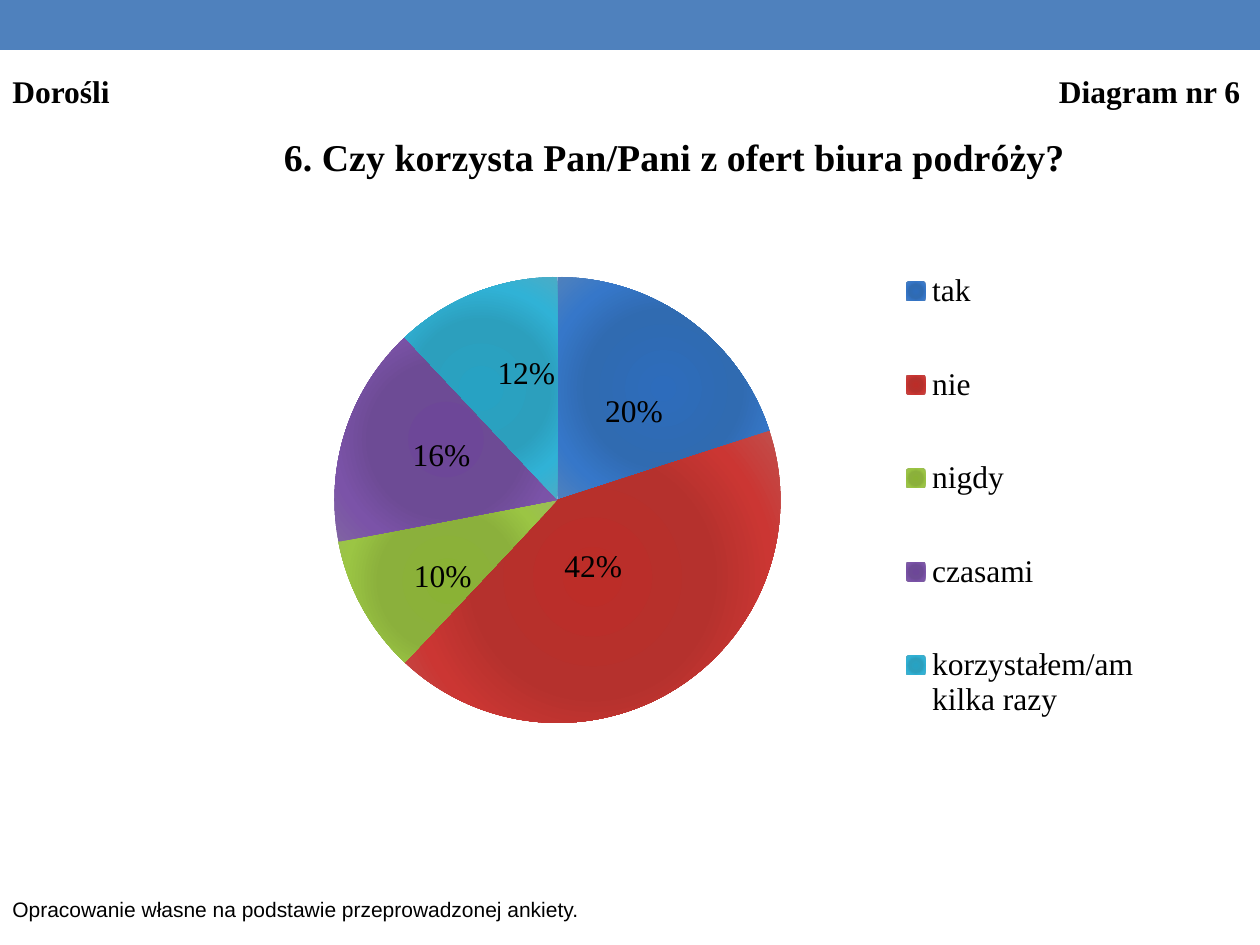
from dataclasses import dataclass

from pptx import Presentation
from pptx import util as u
from pptx.chart.data import CategoryChartData
from pptx.dml.color import RGBColor
from pptx.enum import chart as charts, shapes, text
from pptx.oxml import parse_xml
from pptx.oxml.ns import nsdecls

PX_PER_INCH = 126


@dataclass(frozen=True)
class Theme:
    bar: str = "4F81BD"
    ink: str = "000000"
    serif: str = "Times New Roman"
    sans: str = "Arial"
    title_size: float = 21.6
    body_size: float = 18
    source_size: float = 12


THEME = Theme()

ANSWERS = [
    ("tak", 20, ("2D6CBC", "306BB1", "3677C9", "4F81BD"), (11, 2)),
    ("nie", 42, ("BC2D28", "B5312D", "CB3633", "C0504D"), (-24, -27)),
    ("nigdy", 10, ("8AB235", "8BB03C", "9BC544", "9BBB59"), (-17, 23)),
    ("czasami", 16, ("6D4798", "6D4B95", "7B53A8", "8064A2"), (-10, -9)),
    ("korzystałem/am kilka razy", 12, ("27A2C3", "2C9FBD", "30B2D6", "4BACC6"), (10, -22)),
]
STOPS = (0, 50, 75, 100)
LABEL_FORMAT = '0"%"'


def px(length):
    return u.Emu(round(length * u.Inches(1) / PX_PER_INCH))


def emu_box(box):
    return [px(length) for length in box]


def style_font(font, size, name, bold=False):
    font.size = u.Pt(size)
    font.name = name
    font.bold = bold
    font.color.rgb = RGBColor.from_string(THEME.ink)


def add_bar(slide, box):
    bar = slide.shapes.add_shape(shapes.MSO_SHAPE.RECTANGLE, *emu_box(box))
    bar.shadow.inherit = False
    bar.fill.solid()
    bar.fill.fore_color.rgb = RGBColor.from_string(THEME.bar)
    bar.line.fill.background()


def add_text(slide, box, content, size, name, bold=False, right_tab=None):
    frame = slide.shapes.add_textbox(*emu_box(box)).text_frame
    frame.word_wrap = True
    frame.auto_size = text.MSO_AUTO_SIZE.SHAPE_TO_FIT_TEXT
    paragraph = frame.paragraphs[0]
    paragraph.text = content
    if right_tab:
        paragraph._p.get_or_add_pPr().append(parse_xml(
            f'<a:tabLst {nsdecls("a")}><a:tab pos="{px(right_tab)}" algn="r"/></a:tabLst>'))
    style_font(paragraph.font, size, name, bold)


def manual_layout(chart_box, x, y, width=None, height=None, mode="edge", target=None):
    chart_width, chart_height = chart_box[2:]
    parts = [("layoutTarget", target), ("xMode", mode), ("yMode", mode),
             ("x", x / chart_width), ("y", y / chart_height)]
    if width:
        parts += [("w", width / chart_width), ("h", height / chart_height)]
    body = "".join(f'<c:{tag} val="{value}"/>' for tag, value in parts if value is not None)
    return parse_xml(
        f'<c:layout {nsdecls("c")}><c:manualLayout>{body}</c:manualLayout></c:layout>')


def set_layout(element, layout, before):
    for old in element.xpath("c:layout"):
        element.remove(old)
    following = element.xpath(before)
    if following:
        following[0].addprevious(layout)
    else:
        element.append(layout)


def radial_fill(colours):
    stops = "".join(
        f'<a:gs pos="{stop * 1000}"><a:srgbClr val="{colour}"/></a:gs>'
        for stop, colour in zip(STOPS, colours))
    return parse_xml(
        f'<a:gradFill {nsdecls("a")}><a:gsLst>{stops}</a:gsLst><a:path path="circle">'
        '<a:fillToRect l="50000" t="50000" r="50000" b="50000"/></a:path></a:gradFill>')


def style_slice(series, index, colours, offset, chart_box):
    point = series.points[index]
    point.format.line.fill.background()
    series._element.xpath("c:dPt/c:spPr")[index].insert(0, radial_fill(colours))
    label = point.data_label
    style_font(label.font, THEME.body_size, THEME.serif)
    label.position = charts.XL_LABEL_POSITION.CENTER
    element = series._element.xpath("c:dLbls/c:dLbl")[index]
    set_layout(element, manual_layout(chart_box, *offset, mode=None), "c:txPr")
    number_format = parse_xml(f'<c:numFmt {nsdecls("c")} formatCode="" sourceLinked="0"/>')
    number_format.set("formatCode", LABEL_FORMAT)
    element.xpath("c:txPr")[0].addprevious(number_format)


def add_pie(slide, box):
    data = CategoryChartData(number_format=LABEL_FORMAT)
    data.categories = [answer[0] for answer in ANSWERS]
    data.add_series("Series 1", [answer[1] for answer in ANSWERS])
    chart = slide.shapes.add_chart(charts.XL_CHART_TYPE.PIE, *emu_box(box), data).chart
    style_font(chart.font, THEME.body_size, THEME.sans)

    chart.has_title = True
    title = chart.chart_title
    title.text_frame.text = "6. Czy korzysta Pan/Pani z ofert biura podróży?"
    style_font(title.text_frame.paragraphs[0].font, THEME.title_size, THEME.serif, True)
    set_layout(title._element, manual_layout(box, 74, 50), "c:overlay")

    chart.has_legend = True
    legend = chart.legend
    legend.position = charts.XL_LEGEND_POSITION.RIGHT
    legend.include_in_layout = False
    style_font(legend.font, THEME.body_size, THEME.serif)
    set_layout(legend._element, manual_layout(box, 687, 139, 260, 561), "c:overlay")

    plot = chart.plots[0]
    plot.vary_by_categories = True
    set_layout(chart._chartSpace.xpath("c:chart/c:plotArea")[0],
               manual_layout(box, 99, 201, 511, 446, target="inner"), "c:pieChart")
    series = plot.series[0]
    labels = series.data_labels
    labels.show_value = True
    labels.number_format = LABEL_FORMAT
    labels.number_format_is_linked = False
    style_font(labels.font, THEME.body_size, THEME.serif)
    for index, (_, _, colours, offset) in enumerate(ANSWERS):
        style_slice(series, index, colours, offset, box)


def build_survey_slide(presentation):
    slide = presentation.slides.add_slide(presentation.slide_layouts[6])
    add_bar(slide, (0, 0, 1260, 50))
    add_pie(slide, (203, 76, 1002, 735))
    add_text(slide, (0, 66, 1260, 50), "Dorośli\tDiagram nr 6",
             THEME.body_size, THEME.serif, True, right_tab=1228)
    add_text(slide, (0, 890, 665, 38),
             "Opracowanie własne na podstawie przeprowadzonej ankiety.",
             THEME.source_size, THEME.sans)


def main():
    presentation = Presentation()
    presentation.slide_width, presentation.slide_height = px(1260), px(945)
    build_survey_slide(presentation)
    presentation.save("out.pptx")


if __name__ == "__main__":
    main()
